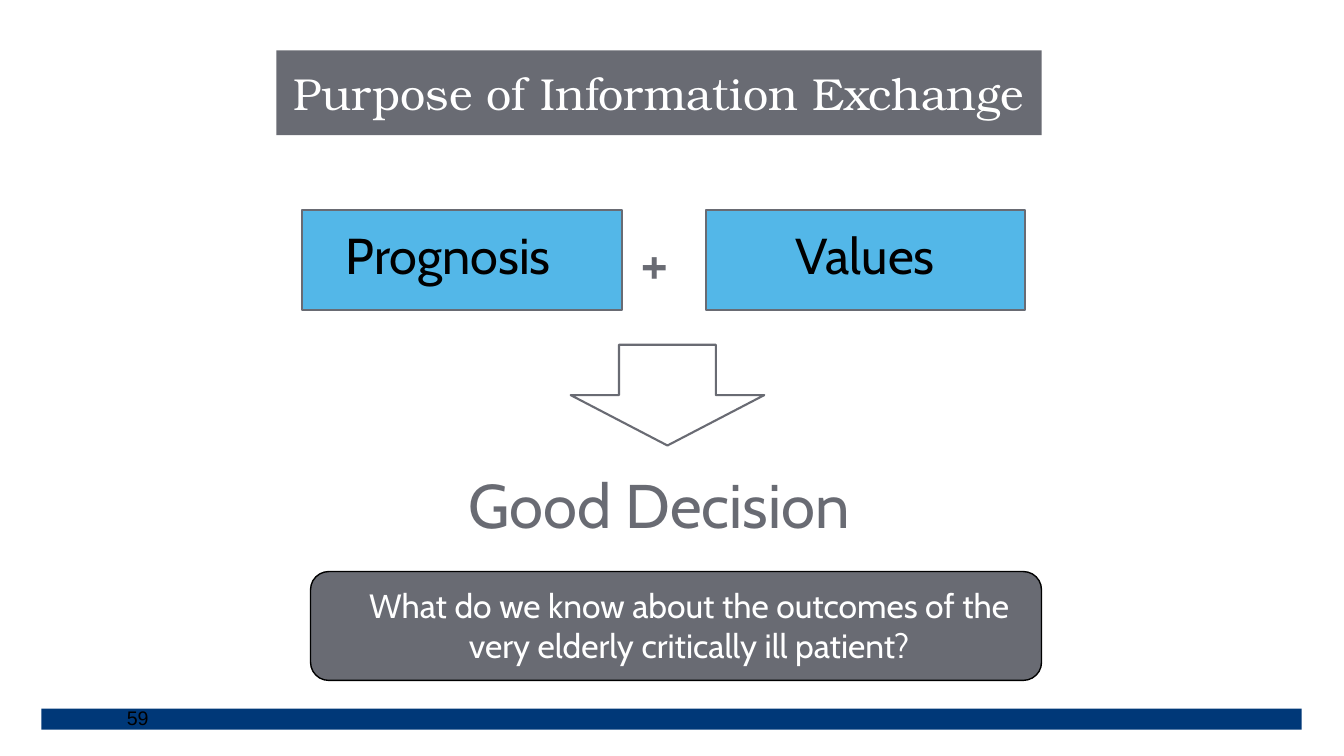
"""Build the slide on the purpose of information exchange."""
from dataclasses import dataclass

import pptx
import pptx.dml.color
import pptx.enum.shapes
import pptx.enum.text
import pptx.util

Inches = pptx.util.Inches
SHAPE = pptx.enum.shapes.MSO_SHAPE
ALIGN = pptx.enum.text.PP_ALIGN
ANCHOR = pptx.enum.text.MSO_ANCHOR


@dataclass(frozen=True)
class Theme:
    """Colours, fonts and type sizes of the slide."""
    navy: str = "003878"
    sky: str = "53B7E8"
    gray: str = "696B73"
    black: str = "000000"
    white: str = "FFFFFF"
    heading: str = "TeX Gyre Bonum"
    body: str = "Cabin"
    plain: str = "Arial"
    display: int = 44
    label: int = 36
    title: int = 32
    question: int = 24
    number: int = 14


THEME = Theme()


def rgb(color):
    """Turn a hex string into a colour."""
    return pptx.dml.color.RGBColor.from_string(color)


def write(sp, text, size, color=THEME.black, font=THEME.body,
          align=ALIGN.CENTER, anchor=ANCHOR.TOP):
    """Put one formatted paragraph into a shape."""
    tf = sp.text_frame
    tf.word_wrap = True
    tf.vertical_anchor = anchor
    p = tf.paragraphs[0]
    p.alignment = align
    r = p.add_run()
    r.text = text
    r.font.size = pptx.util.Pt(size)
    r.font.name = font
    r.font.color.rgb = rgb(color)


def add_shape(slide, kind, box, fill=None, line=None, width=1.5):
    """Add a flat preset shape with an optional fill and outline."""
    sp = slide.shapes.add_shape(kind, *map(Inches, box))
    sp.shadow.inherit = False
    if fill:
        sp.fill.solid()
        sp.fill.fore_color.rgb = rgb(fill)
    else:
        sp.fill.background()
    if line:
        sp.line.color.rgb = rgb(line)
        sp.line.width = pptx.util.Pt(width)
    else:
        sp.line.fill.background()
    return sp


def add_text(slide, box, text, size, **style):
    """Add a text box with one formatted paragraph."""
    write(slide.shapes.add_textbox(*map(Inches, box)), text, size, **style)


def add_factor(slide, left, text, align):
    """Add a blue box with the name of one factor in the decision."""
    add_shape(slide, SHAPE.RECTANGLE, (left, 2.08, 3.17, 1), THEME.sky, THEME.gray)
    add_text(slide, (left + 0.33, 2.17, 2.5, 0.71), text, THEME.label, align=align)


def main():
    """Build and save the slide."""
    prs = pptx.Presentation()
    prs.slide_width, prs.slide_height = Inches(13.33), Inches(7.5)
    slide = prs.slides.add_slide(prs.slide_layouts[6])

    add_shape(slide, SHAPE.RECTANGLE, (0.41, 7.03, 12.5, 0.21), THEME.navy)

    add_factor(slide, 3, "Prognosis", ALIGN.LEFT)
    add_factor(slide, 7, "Values", ALIGN.CENTER)
    add_text(slide, (6.25, 2.17, 0.67, 0.84), "+", THEME.display,
             color=THEME.gray, align=ALIGN.LEFT)
    add_shape(slide, SHAPE.DOWN_ARROW, (5.66, 3.42, 1.92, 1), line=THEME.gray)
    add_text(slide, (4.33, 4.58, 4.42, 0.84), "Good Decision", THEME.display,
             color=THEME.gray)

    title = add_shape(slide, SHAPE.RECTANGLE, (2.74, 0.5, 7.59, 0.84), THEME.gray)
    write(title, "Purpose of Information Exchange", THEME.title, color=THEME.white,
          font=THEME.heading, anchor=ANCHOR.MIDDLE)

    add_shape(slide, SHAPE.ROUNDED_RECTANGLE, (3.08, 5.67, 7.25, 1.08),
              THEME.gray, THEME.black, width=1)
    add_text(slide, (3.25, 5.75, 7.17, 0.91),
             "What do we know about the outcomes of the very elderly "
             "critically ill patient?", THEME.question, color=THEME.white)

    add_text(slide, (1.16, 7.03, 9.97, 0.18), "59", THEME.number, font=THEME.plain,
             align=ALIGN.LEFT, anchor=ANCHOR.MIDDLE)

    prs.save("out.pptx")


if __name__ == "__main__":
    main()
